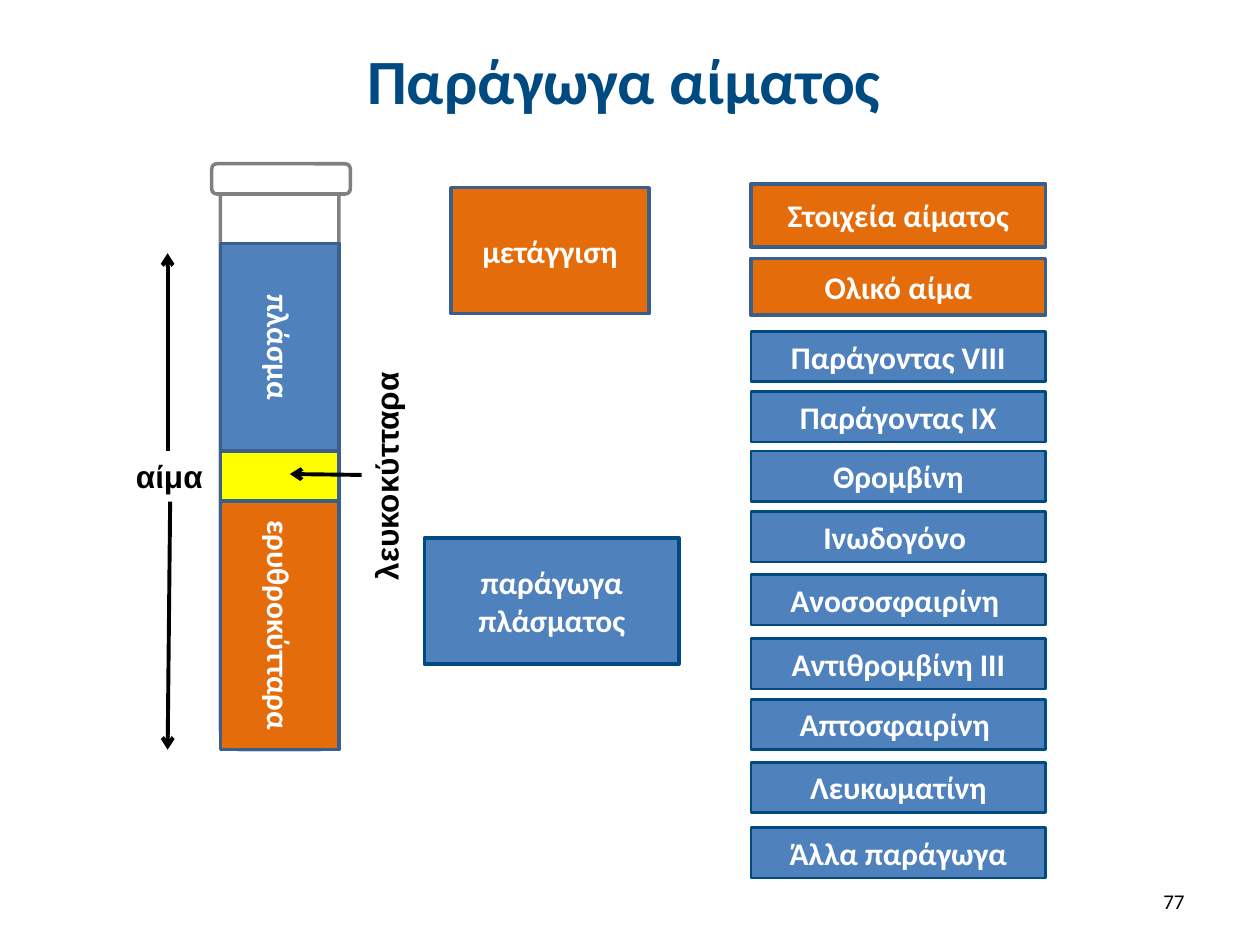
from typing import NamedTuple

from lxml.etree import SubElement
from pptx import Presentation
from pptx.dml.color import RGBColor
from pptx.enum.shapes import MSO_CONNECTOR as Link, MSO_SHAPE as Form
from pptx.enum.text import MSO_ANCHOR as Anchor, MSO_AUTO_SIZE as Fit, PP_ALIGN as Align
from pptx.oxml.ns import qn
from pptx.util import Pt

NAVY, BLUE, ORANGE = "004A82", "4F81BD", "E46C0A"
STEEL, GRAY, YELLOW = "3A5F8C", "808080", "FFFF00"
WHITE, BLACK = "FFFFFF", "000000"


class Box(NamedTuple):
    left: float
    top: float
    width: float
    height: float
    fill: str
    line: str
    text: str = ""
    weight: float = 2
    form: Form = Form.RECTANGLE
    vert: bool = False
    grow: bool = False


class Label(NamedTuple):
    left: float
    top: float
    width: float
    height: float
    text: str
    size: float = 18
    font: str = "Arial"
    color: str = BLACK
    bold: bool = True
    align: Align = Align.LEFT
    anchor: Anchor = Anchor.TOP
    turn: float = 0
    wrap: bool = False


class Arrow(NamedTuple):
    x1: float
    y1: float
    x2: float
    y2: float


def paint(target, color: str) -> None:
    target.rgb = RGBColor.from_string(color)


def write(shape, text: str, *, size: float = 18, font: str = "Calibri",
          color: str = WHITE, bold: bool = True, align: Align = Align.CENTER,
          anchor: Anchor = Anchor.MIDDLE, wrap: bool = True,
          grow: bool = False, vert: bool = False) -> None:
    frame = shape.text_frame
    frame.word_wrap = wrap
    frame.vertical_anchor = anchor
    if grow:
        frame.auto_size = Fit.SHAPE_TO_FIT_TEXT
    if vert:
        shape.element.txBody.bodyPr.set("vert", "vert")
    para = frame.paragraphs[0]
    para.alignment = align
    run = para.add_run()
    run.text = text
    run.font.name, run.font.size, run.font.bold = font, Pt(size), bold
    paint(run.font.color, color)


def draw_box(slide, box: Box):
    shape = slide.shapes.add_shape(box.form, *map(Pt, box[:4]))
    shape.shadow.inherit = False
    shape.fill.solid()
    paint(shape.fill.fore_color, box.fill)
    paint(shape.line.color, box.line)
    shape.line.width = Pt(box.weight)
    if box.text:
        write(shape, box.text, vert=box.vert, grow=box.grow,
              anchor=Anchor.TOP if box.grow else Anchor.MIDDLE)
    return shape


def draw_label(slide, label: Label):
    shape = slide.shapes.add_textbox(*map(Pt, label[:4]))
    shape.rotation = label.turn
    write(shape, label.text, size=label.size, font=label.font,
          color=label.color, bold=label.bold, align=label.align,
          anchor=label.anchor, wrap=label.wrap, grow=not label.wrap)
    return shape


def draw_arrow(slide, arrow: Arrow):
    line = slide.shapes.add_connector(Link.STRAIGHT, *map(Pt, arrow))
    line.line.width = Pt(2.25)
    paint(line.line.color, BLACK)
    SubElement(line.line._get_or_add_ln(), qn("a:tailEnd"), type="arrow")
    SubElement(line.element.spPr, qn("a:effectLst"))
    return line


TITLES = [
    Label(36.7, 9.4, 648, 71.3, "Παράγωγα αίματος ", 36, "Calibri", NAVY,
          align=Align.CENTER, anchor=Anchor.MIDDLE, wrap=True),
    Label(516.2, 500.4, 167.8, 28.8, "77", 12, "Calibri", bold=False,
          align=Align.RIGHT, anchor=Anchor.MIDDLE, wrap=True),
]
TUBE = [
    Box(126, 99.4, 67.7, 329, WHITE, GRAY, form=Form.ROUNDED_RECTANGLE),
    Box(126, 139, 67.7, 118.8, BLUE, STEEL, "πλάσμα", vert=True),
    Box(126, 257.8, 67.7, 28.4, YELLOW, STEEL),
    Box(126, 286.2, 67.7, 142.2, ORANGE, STEEL, "ερυθροκύτταρα", vert=True),
    Box(121, 93.6, 79.2, 17.3, WHITE, GRAY, form=Form.ROUNDED_RECTANGLE),
]
CELLS = Label(153.4, 257, 134.6, 28.8, "λευκοκύτταρα", turn=270)
BLOOD = Label(70.6, 257.8, 53.3, 28.8, "αίμα")
ARROWS = [Arrow(206.6, 271.4, 165.6, 270.9), Arrow(95.8, 257.8, 95.8, 144.7)]
DOWN = Arrow(97.2, 286.6, 95.8, 428.4)
GROUPS = [
    Box(257.8, 107.3, 113, 72, ORANGE, STEEL, "μετάγγιση"),
    Box(242.6, 307.4, 145.4, 72, BLUE, NAVY, "παράγωγα πλάσματος"),
    Box(429.1, 105.1, 168.5, 36, ORANGE, STEEL, "Στοιχεία αίματος"),
    Box(429.1, 147.6, 168.5, 32.4, ORANGE, STEEL, "Ολικό αίμα"),
]
PARTS = [
    (189.4, "Παράγοντας VIII"),
    (223.9, "Παράγοντας IX"),
    (257.8, "Θρομβίνη"),
    (292.3, "Ινωδογόνο "),
    (328.3, "Ανοσοσφαιρίνη "),
    (365, "Αντιθρομβίνη ΙΙΙ"),
    (399.6, "Απτοσφαιρίνη "),
    (435.6, "Λευκωματίνη"),
    (473, "Άλλα παράγωγα"),
]


def main() -> None:
    deck = Presentation()
    deck.slide_width, deck.slide_height = Pt(720), Pt(540)
    slide = deck.slides.add_slide(deck.slide_layouts[6])
    for label in TITLES:
        draw_label(slide, label)
    for box in TUBE:
        draw_box(slide, box)
    draw_label(slide, CELLS)
    blood = draw_label(slide, BLOOD)
    for arrow in ARROWS:
        draw_arrow(slide, arrow)
    draw_arrow(slide, DOWN).begin_connect(blood, 2)
    for box in GROUPS:
        draw_box(slide, box)
    for top, text in PARTS:
        draw_box(slide, Box(429.1, top, 168.5, 28.8, BLUE, NAVY, text,
                            weight=1.5, grow=True))
    deck.save("out.pptx")


if __name__ == "__main__":
    main()
